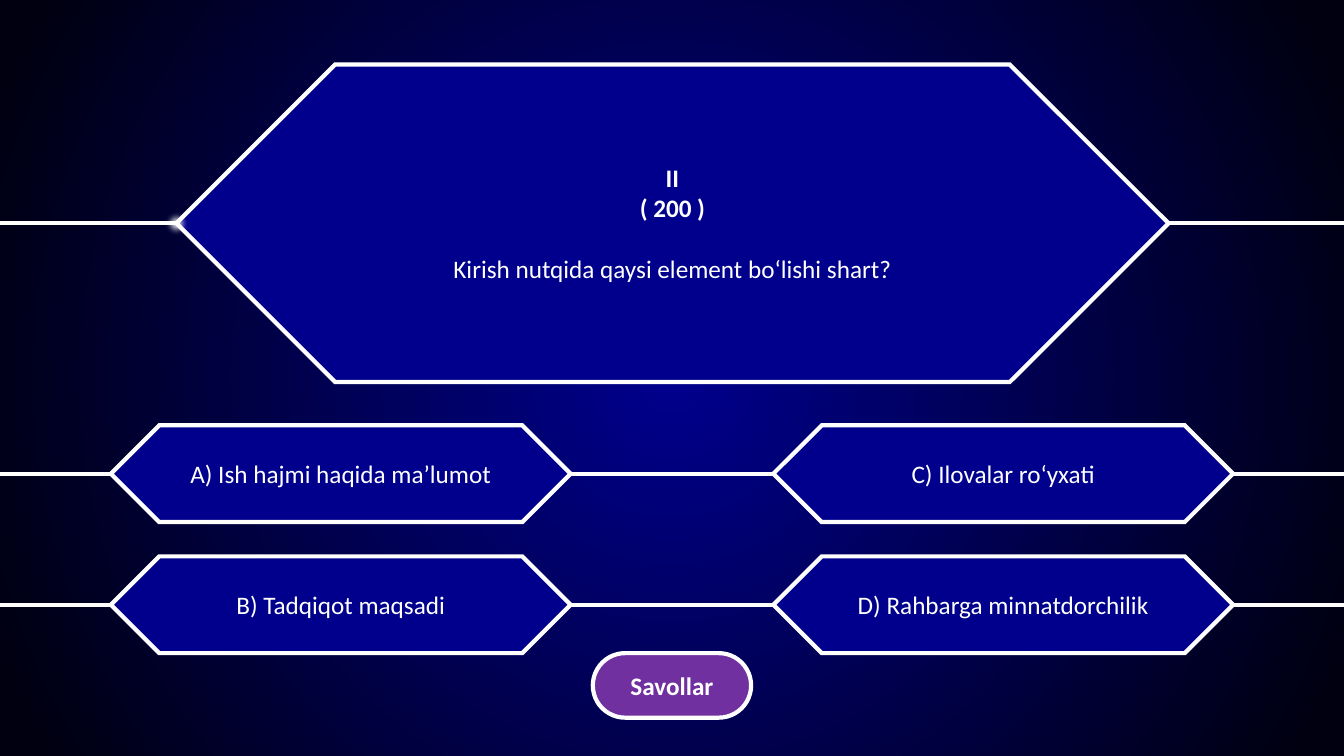
from dataclasses import dataclass

from lxml import etree
from pptx import Presentation
from pptx.dml.color import RGBColor
from pptx.enum.shapes import MSO_CONNECTOR, MSO_SHAPE
from pptx.enum.text import MSO_ANCHOR, PP_ALIGN
from pptx.oxml.ns import qn
from pptx.util import Inches, Pt

STRAIGHT = MSO_CONNECTOR.STRAIGHT
HEXAGON = MSO_SHAPE.SNIP_2_DIAG_RECTANGLE
PILL = MSO_SHAPE.ROUNDED_RECTANGLE
OVAL = MSO_SHAPE.OVAL
MIDDLE = MSO_ANCHOR.MIDDLE
CENTER = PP_ALIGN.CENTER

SLIDE_W, SLIDE_H = 13.33, 7.5


@dataclass(frozen=True)
class Theme:
    font: str = "Calibri"
    size: int = 18
    outline: int = 3
    panel: RGBColor = RGBColor.from_string("00008D")
    night: RGBColor = RGBColor.from_string("000010")
    light: RGBColor = RGBColor.from_string("FFFFFF")
    button: RGBColor = RGBColor.from_string("7030A0")


class QuizSlide:
    def __init__(self, slide, theme):
        self.s = slide
        self.theme = theme

    def background(self):
        """Fill the slide with a glow that darkens from the centre outwards."""
        fill = self.s.background.fill
        fill.gradient()
        stops = ((0, self.theme.panel), (0.95, self.theme.night))
        for stop, (position, color) in zip(fill.gradient_stops, stops):
            stop.position = position
            stop.color.rgb = color
        grad = next(self.s.element.iter(qn("a:gradFill")))
        grad.remove(grad.find(qn("a:lin")))
        circle = etree.SubElement(grad, qn("a:path"), {"path": "circle"})
        sides = {side: "50000" for side in "ltrb"}
        etree.SubElement(circle, qn("a:fillToRect"), sides)

    def rail(self, y):
        """Draw a line across the whole slide."""
        line = self.s.shapes.add_connector(
            STRAIGHT, Inches(SLIDE_W), Inches(y), Inches(0), Inches(y))
        line.line.color.rgb = self.theme.light
        line.line.width = Pt(self.theme.outline)
        etree.SubElement(line._element.spPr, qn("a:effectLst"))

    def shape(self, kind, x, y, w, h, color):
        sp = self.s.shapes.add_shape(
            kind, Inches(x), Inches(y), Inches(w), Inches(h))
        sp.shadow.inherit = False
        sp.fill.solid()
        sp.fill.fore_color.rgb = color
        return sp

    def panel(self, kind, box, color, paragraphs):
        """Add an outlined shape; paragraphs are (text, bold, space before)."""
        sp = self.shape(kind, *box, color)
        for i in range(len(sp.adjustments)):
            sp.adjustments[i] = 0.5
        sp.line.color.rgb = self.theme.light
        sp.line.width = Pt(self.theme.outline)
        outline = sp._element.spPr.find(qn("a:ln"))
        etree.SubElement(outline, qn("a:miter"), {"lim": "800000"})
        tf = sp.text_frame
        tf.word_wrap = True
        tf.vertical_anchor = MIDDLE
        for i, (text, bold, gap) in enumerate(paragraphs):
            p = tf.add_paragraph() if i else tf.paragraphs[0]
            p.text = text
            p.alignment = CENTER
            if gap:
                p.space_before = Pt(gap)
            p.font.name = self.theme.font
            p.font.size = Pt(self.theme.size)
            p.font.bold = bold
            p.font.color.rgb = self.theme.light

    def spark(self, x, y, diameter):
        """Add a soft-edged light dot centred on a point."""
        sp = self.shape(OVAL, x - diameter / 2, y - diameter / 2,
                        diameter, diameter, self.theme.light)
        sp.line.fill.background()
        effects = sp._element.spPr.find(qn("a:effectLst"))
        etree.SubElement(effects, qn("a:softEdge"), {"rad": str(Pt(5))})


def main():
    prs = Presentation()
    prs.slide_width, prs.slide_height = Inches(SLIDE_W), Inches(SLIDE_H)
    theme = Theme()
    quiz = QuizSlide(prs.slides.add_slide(prs.slide_layouts[6]), theme)
    quiz.background()

    answer_w, answer_h = 4.56, 0.96
    columns, rows = (1.1, 7.67), (4.22, 5.52)
    answers = (
        ("A) Ish hajmi haqida ma’lumot", "B) Tadqiqot maqsadi"),
        ("C) Ilovalar ro‘yxati", "D) Rahbarga minnatdorchilik"),
    )
    for y in rows:
        quiz.rail(y + answer_h / 2)
    for x, column in zip(columns, answers):
        for y, answer in zip(rows, column):
            quiz.panel(HEXAGON, (x, y, answer_w, answer_h), theme.panel,
                       [(answer, False, 0)])

    x, y, w, h = question_box = (1.75, 0.64, 9.84, 3.15)
    middle = y + h / 2
    quiz.rail(middle)
    quiz.panel(HEXAGON, question_box, theme.panel, [
        ("II", True, 0),
        ("( 200 )", True, 0),
        ("Kirish nutqida qaysi element bo‘lishi shart?", False, 22),
    ])
    for diameter in (0.3, 0.1):
        quiz.spark(x, middle, diameter)

    quiz.panel(PILL, (5.88, 6.48, 1.57, 0.64), theme.button,
               [("Savollar", True, 0)])
    prs.save("out.pptx")


if __name__ == "__main__":
    main()
